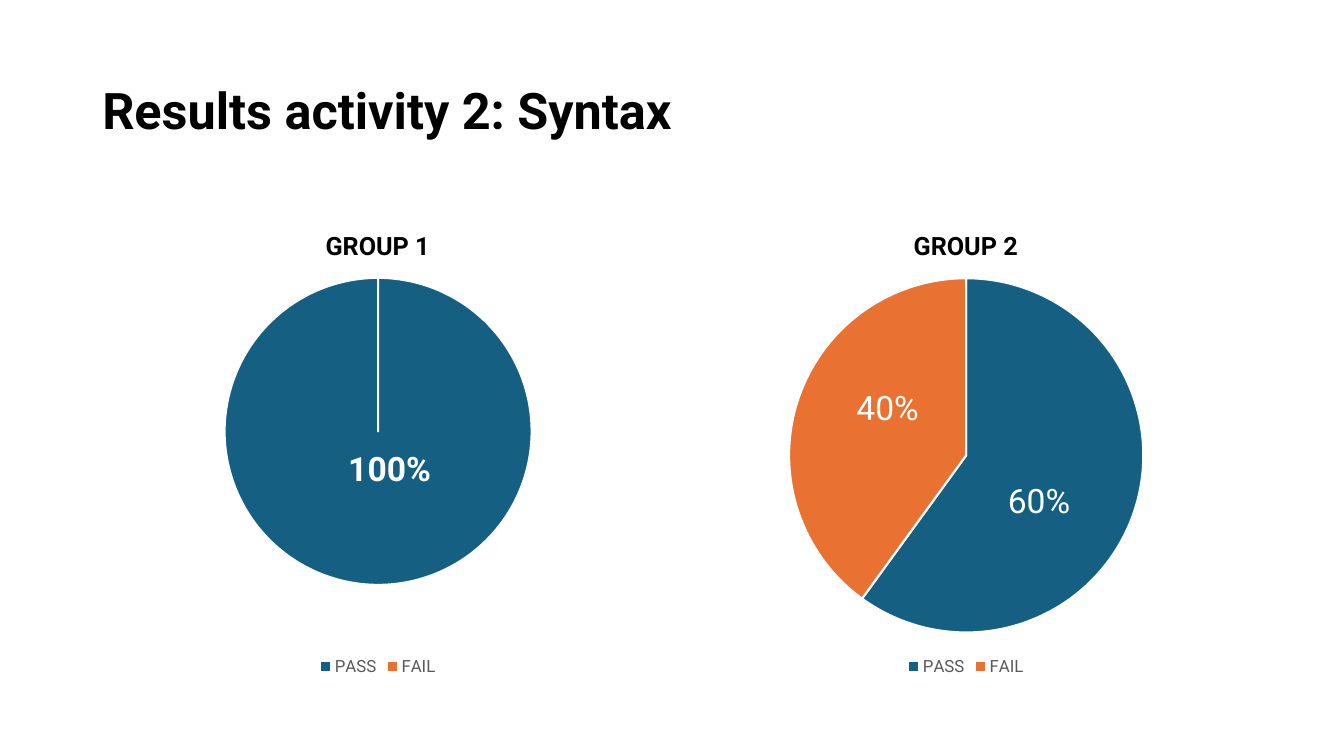
from lxml.etree import SubElement
from pptx import Presentation
from pptx.chart.data import CategoryChartData as ChartData
from pptx.dml.color import RGBColor
from pptx.enum.chart import XL_CHART_TYPE as ChartType
from pptx.enum.chart import XL_LABEL_POSITION as LabelPosition
from pptx.enum.chart import XL_LEGEND_POSITION as LegendPosition
from pptx.enum.text import MSO_ANCHOR as Anchor
from pptx.oxml.ns import qn
from pptx.util import Cm, Pt

FONT = "Roboto"
SLICES = {"PASS": "156082", "FAIL": "E97132"}


def color(hex_text):
    return RGBColor.from_string(hex_text)


def style_font(font, size, hex_text, bold=False):
    font.name, font.size, font.bold = FONT, Pt(size), bold
    font.color.rgb = color(hex_text)


def set_layout(parent, index, **settings):
    """Give a chart part a manual layout, as fractions of the chart."""
    for old in parent.findall(qn("c:layout")):
        parent.remove(old)
    layout = SubElement(parent, qn("c:layout"))
    parent.insert(index, layout)
    manual = SubElement(layout, qn("c:manualLayout"))
    for name, value in settings.items():
        SubElement(manual, qn("c:" + name)).set("val", str(value))


def add_title(page, text):
    box = page.shapes.add_textbox(Cm(2.33), Cm(1.01), Cm(29.21), Cm(3.68))
    frame = box.text_frame
    frame.word_wrap = True
    frame.vertical_anchor = Anchor.MIDDLE
    frame.text = text
    para = frame.paragraphs[0]
    para.line_spacing = 0.9
    style_font(para.runs[0].font, 36, "000000", True)


def add_pie(page, left, title, values, plot, offsets, bold):
    data = ChartData()
    data.categories = list(SLICES)
    data.add_series("Series 1", values)
    chart = page.shapes.add_chart(
        ChartType.PIE, left, Cm(5.07), Cm(14.4), Cm(12.09), data).chart
    style_font(chart.font, 10, "000000")

    # Heading and legend
    heading = chart.chart_title
    heading.text_frame.text = title
    style_font(heading.text_frame.paragraphs[0].runs[0].font, 18, "000000", True)
    set_layout(heading._element, 1, xMode="edge", yMode="edge", x=0.4, y=0.05)
    chart.has_legend = True
    chart.legend.position = LegendPosition.BOTTOM
    chart.legend.include_in_layout = False
    style_font(chart.legend.font, 12, "595959")

    # Round plot area
    x, y, width, height = plot
    plot_area = chart._chartSpace.find(".//" + qn("c:plotArea"))
    set_layout(plot_area, 0, layoutTarget="inner", xMode="edge", yMode="edge",
               x=x, y=y, w=width, h=height)

    # Slices, with labels on those above zero
    pie = chart.plots[0]
    pie.vary_by_categories = True
    series = pie.series[0]
    series.data_labels.show_value = False
    for index, (value, fill) in enumerate(zip(values, SLICES.values())):
        point = series.points[index]
        point.format.fill.solid()
        point.format.fill.fore_color.rgb = color(fill)
        point.format.line.color.rgb = color("FFFFFF")
        point.format.line.width = Pt(1.5)
        if value:
            label = point.data_label
            label.text_frame.text = f"{value}%"
            style_font(label.text_frame.paragraphs[0].runs[0].font,
                       24, "FFFFFF", bold)
            label.position = LabelPosition.CENTER
    for label, (dx, dy) in zip(series._element.iter(qn("c:dLbl")), offsets):
        set_layout(label, 1, x=dx, y=dy)


def main():
    deck = Presentation()
    deck.slide_width, deck.slide_height = Cm(33.87), Cm(19.05)
    page = deck.slides.add_slide(deck.slide_layouts[6])

    add_title(page, "Results activity 2: Syntax")
    add_pie(page, Cm(2.33), "GROUP 1", (100, 0),
            (0.23, 0.16, 0.54, 0.64), [(0.02, -0.08)], True)
    add_pie(page, Cm(17.15), "GROUP 2", (60, 40),
            (0.19, 0.16, 0.62, 0.74), [(-0.02, 0.04), (0.01, -0.04)], False)

    deck.save("out.pptx")


if __name__ == "__main__":
    main()
